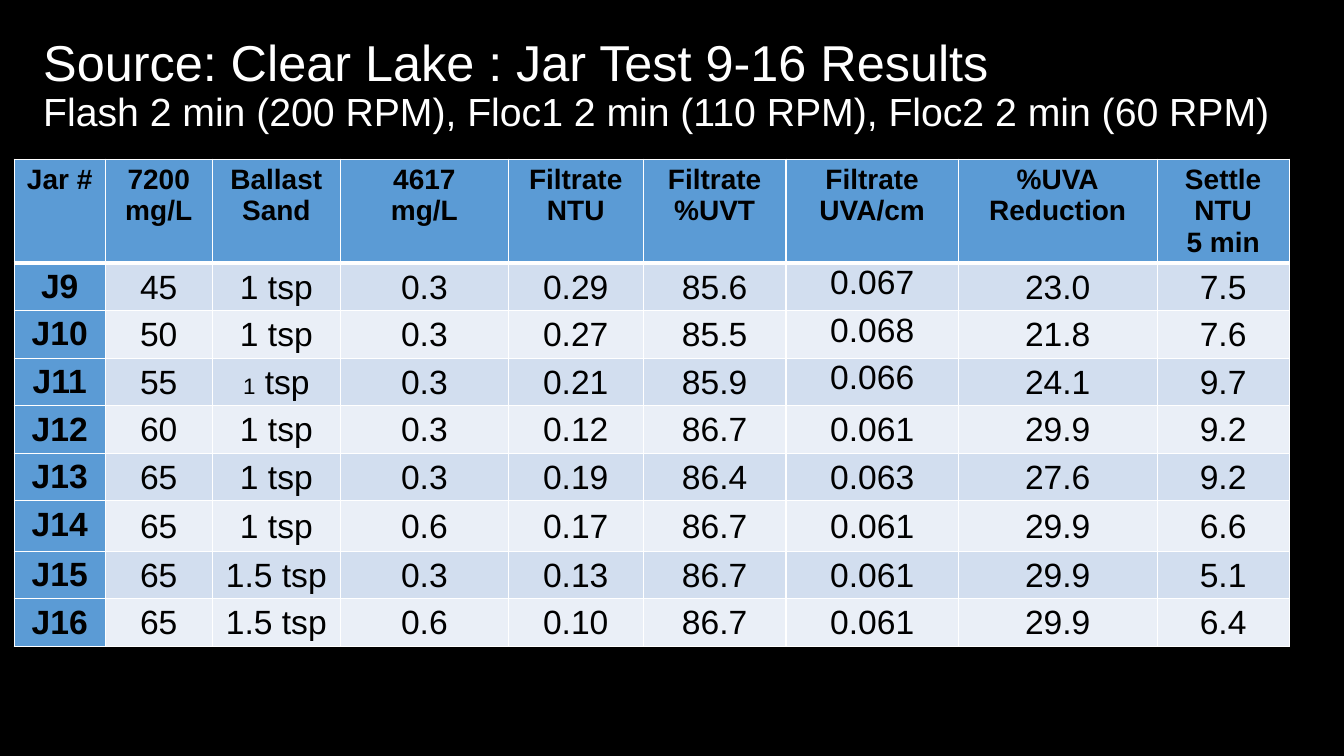
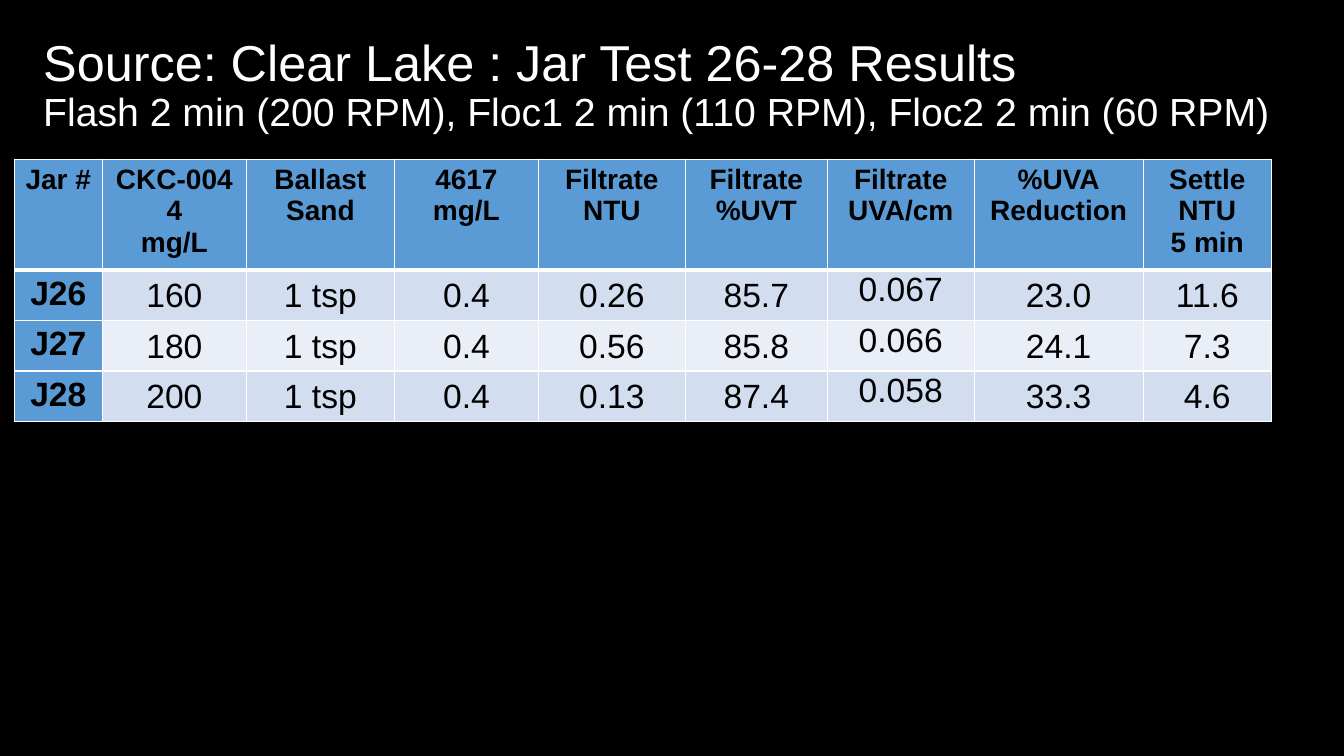
from pptx import Presentation
from pptx import util as u
from pptx.dml.color import RGBColor
from pptx.enum import text
from pptx.oxml import parse_xml
from pptx.oxml.ns import nsdecls

FONT = "Arial"
BLACK, WHITE = "000000", "FFFFFF"
HEADER, BANDS = "5B9BD5", ("D2DEEF", "EAEFF7")

MIXING = "Flash 2 min (200 RPM), Floc1 2 min (110 RPM), Floc2 2 min (60 RPM)"
MEASURES = ["Ballast\nSand", "4617\nmg/L", "Filtrate\nNTU", "Filtrate\n%UVT",
            "Filtrate\nUVA/cm", "%UVA\nReduction", "Settle\nNTU\n5 min"]
UVA_COLUMN, TOP_ALIGNED_ROWS = 6, (1, 2, 3)
HEADER_HEIGHT, JAR_HEIGHT, TALL_HEIGHT = 0.5, 1.04, 1.27

TESTS = [
    {
        "title": "Source: Clear Lake : Jar Test 9-16 Results",
        "coagulant": "7200\nmg/L",
        "widths": [2.29, 2.7, 3.23, 4.23, 3.4, 3.6, 4.34, 5.01, 3.33],
        "tall_jar": "J14",
        "jars": [
            ("J9", "45", "1 tsp", "0.3", "0.29", "85.6", "0.067", "23.0", "7.5"),
            ("J10", "50", "1 tsp", "0.3", "0.27", "85.5", "0.068", "21.8", "7.6"),
            ("J11", "55", [("1", 16), (" tsp", 24)], "0.3", "0.21", "85.9", "0.066", "24.1", "9.7"),
            ("J12", "60", "1 tsp", "0.3", "0.12", "86.7", "0.061", "29.9", "9.2"),
            ("J13", "65", "1 tsp", "0.3", "0.19", "86.4", "0.063", "27.6", "9.2"),
            ("J14", "65", "1 tsp", "0.6", "0.17", "86.7", "0.061", "29.9", "6.6"),
            ("J15", "65", "1.5 tsp", "0.3", "0.13", "86.7", "0.061", "29.9", "5.1"),
            ("J16", "65", "1.5 tsp", "0.6", "0.10", "86.7", "0.061", "29.9", "6.4"),
        ],
    },
    {
        "title": "Source: Clear Lake : Jar Test 26-28 Results",
        "coagulant": "CKC-0044\nmg/L",
        "widths": [2.22, 3.63, 3.73, 3.63, 3.7, 3.58, 3.7, 4.26, 3.23],
        "tall_jar": None,
        "jars": [
            ("J26", "160", "1 tsp", "0.4", "0.26", "85.7", "0.067", "23.0", "11.6"),
            ("J27", "180", "1 tsp", "0.4", "0.56", "85.8", "0.066", "24.1", "7.3"),
            ("J28", "200", "1 tsp", "0.4", "0.13", "87.4", "0.058", "33.3", "4.6"),
        ],
    },
]


def color(value):
    return RGBColor.from_string(value)


def add_run(paragraph, words, size, ink, bold=False):
    run = paragraph.add_run()
    run.text = words
    run.font.name, run.font.size, run.font.bold = FONT, u.Pt(size), bold
    run.font.color.rgb = color(ink)


def add_title(slide, title):
    heading = slide.shapes.add_textbox(u.Cm(0.84), u.Cm(0.33), u.Cm(31.67), u.Cm(3.68)).text_frame
    heading.word_wrap = True
    heading.vertical_anchor = text.MSO_ANCHOR.MIDDLE
    lines = heading.paragraphs[0]
    lines.line_spacing = 0.9
    add_run(lines, title, 36, WHITE)
    lines.add_line_break()
    add_run(lines, MIXING, 28, WHITE)


def set_borders(cell, row):
    widths = {"L": 1, "R": 1, "T": 3 if row == 1 else 1, "B": 3 if row == 0 else 1}
    properties = cell._tc.get_or_add_tcPr()
    for side, width in widths.items():
        properties.append(parse_xml(
            f'<a:ln{side} {nsdecls("a")} w="{u.Pt(width)}"><a:solidFill>'
            f'<a:srgbClr val="{WHITE}"/></a:solidFill></a:ln{side}>'))


def fill_cell(cell, content, row, column):
    is_label = row == 0 or column == 0
    set_borders(cell, row)
    cell.fill.solid()
    cell.fill.fore_color.rgb = color(HEADER if is_label else BANDS[(row - 1) % 2])
    if not is_label:
        cell.margin_left = cell.margin_right = cell.margin_top = u.Cm(0.03)
        cell.margin_bottom = 0
        if column != UVA_COLUMN or row not in TOP_ALIGNED_ROWS:
            cell.vertical_anchor = text.MSO_ANCHOR.MIDDLE
    size = 20 if row == 0 else 24
    if isinstance(content, str):
        lines = [[(line, size)] for line in content.split("\n")]
    else:
        lines = [content]
    frame = cell.text_frame
    for index, runs in enumerate(lines):
        paragraph = frame.add_paragraph() if index else frame.paragraphs[0]
        paragraph.alignment = text.PP_ALIGN.CENTER
        for words, run_size in runs:
            add_run(paragraph, words, run_size, BLACK, is_label)


def add_results(slide, test):
    rows = [["Jar #", test["coagulant"], *MEASURES], *test["jars"]]
    heights = [HEADER_HEIGHT] + [TALL_HEIGHT if jar[0] == test["tall_jar"] else JAR_HEIGHT
                                 for jar in test["jars"]]
    widths = test["widths"]
    results = slide.shapes.add_table(len(rows), len(widths), u.Cm(0.36), u.Cm(4.01),
                                     u.Cm(sum(widths)), u.Cm(sum(heights))).table
    for column, width in zip(results.columns, widths):
        column.width = u.Cm(width)
    for r, (contents, height) in enumerate(zip(rows, heights)):
        results.rows[r].height = u.Cm(height)
        for c, content in enumerate(contents):
            fill_cell(results.cell(r, c), content, r, c)


def main():
    deck = Presentation()
    deck.slide_width, deck.slide_height = u.Cm(33.87), u.Cm(19.05)
    backdrop = deck.slide_master.background.fill
    backdrop.solid()
    backdrop.fore_color.rgb = color(BLACK)
    for test in TESTS:
        slide = deck.slides.add_slide(deck.slide_layouts[6])
        add_results(slide, test)
        add_title(slide, test["title"])
    deck.save("out.pptx")


if __name__ == "__main__":
    main()
